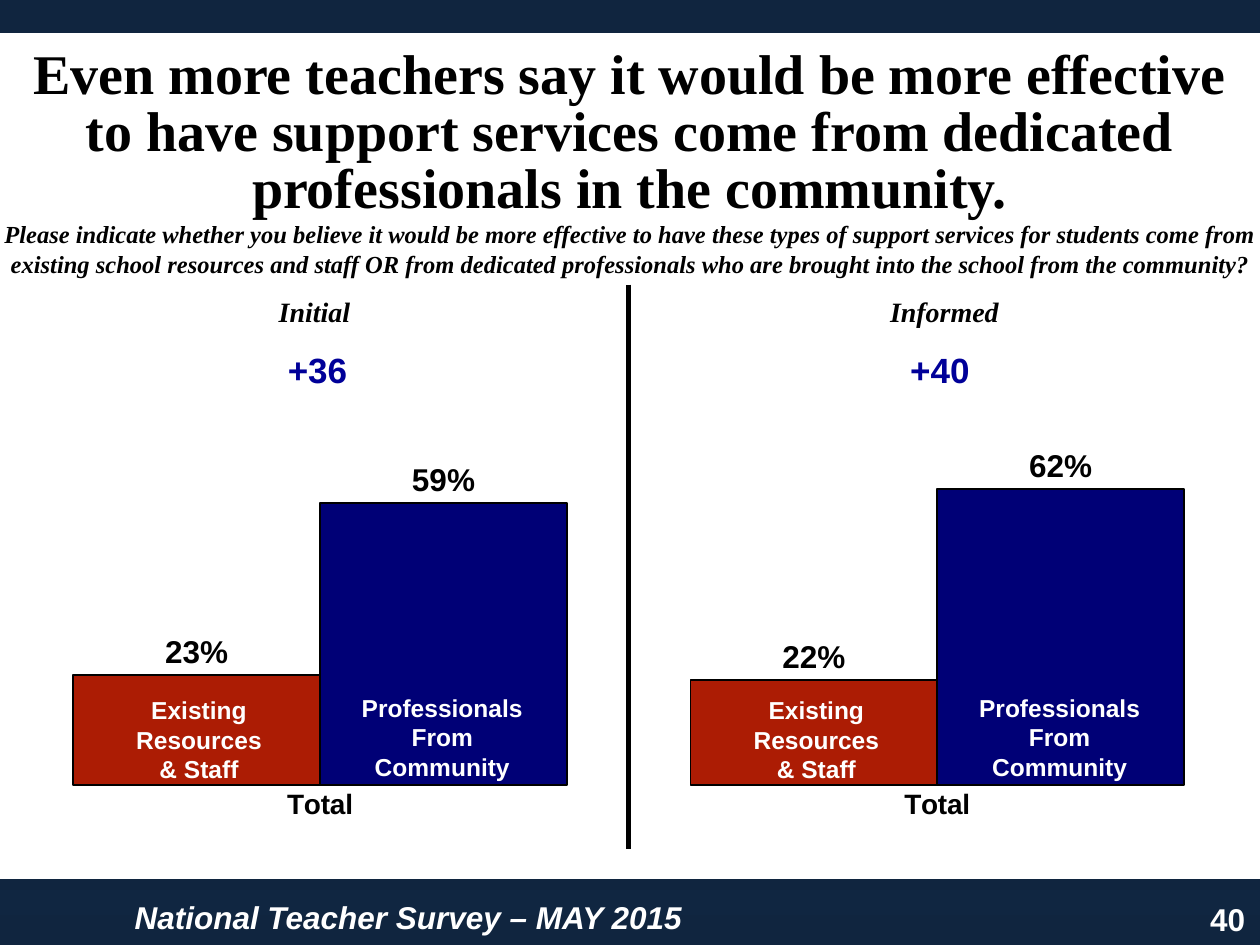
from copy import deepcopy

from lxml import etree
from pptx import Presentation
from pptx.chart.data import CategoryChartData
from pptx.dml.color import RGBColor
from pptx.enum.chart import XL_CHART_TYPE, XL_LABEL_POSITION, XL_TICK_LABEL_POSITION, XL_TICK_MARK
from pptx.enum.shapes import MSO_CONNECTOR, MSO_SHAPE
from pptx.enum.text import MSO_ANCHOR, PP_ALIGN
from pptx.oxml import parse_xml
from pptx.oxml.ns import nsdecls, qn
from pptx.util import Pt

NAVY = RGBColor(0x10, 0x25, 0x3F)
NAVY_LIGHT = RGBColor(0x17, 0x37, 0x5E)
WHITE = RGBColor(0xFF, 0xFF, 0xFF)
BLACK = RGBColor(0, 0, 0)
RED = RGBColor(0xAC, 0x1C, 0x04)
BLUE = RGBColor(0, 0, 0x76)
MARGIN_BLUE = RGBColor(0, 0, 0x99)

SANS = "Arial"
SERIF = "Times New Roman"

TITLE = ("Even more teachers say it would be more effective to have support services "
         "come from dedicated professionals in the community.")
QUESTION = ("Please indicate whether you believe it would be more effective to have these types of "
            "support services for students come from existing school resources and staff OR from "
            "dedicated professionals who are brought into the school from the community?")


def style_font(font, size, color, name=SANS, italic=False):
    font.name = name
    font.size = Pt(size)
    font.bold = True
    font.italic = italic
    font.color.rgb = color


def add_text(slide, box, lines, size, color, name=SANS, italic=False, align=PP_ALIGN.CENTER):
    frame = slide.shapes.add_textbox(*map(Pt, box)).text_frame
    frame.word_wrap = True
    frame.text = "\n".join(lines)
    for paragraph in frame.paragraphs:
        paragraph.alignment = align
        style_font(paragraph.font, size, color, name, italic)


def set_background(slide):
    fill = slide.background.fill
    fill.gradient()
    fill.gradient_angle = 90
    stops = slide.element.find(".//" + qn("a:gsLst"))
    stops.append(deepcopy(stops[-1]))
    for stop, position, color in zip(fill.gradient_stops, (0, 0.5, 1), (NAVY, NAVY_LIGHT, NAVY)):
        stop.position = position
        stop.color.rgb = color


def add_panel(slide):
    panel = slide.shapes.add_shape(MSO_SHAPE.RECTANGLE, Pt(-7.2), Pt(15.84), Pt(733.7), Pt(489.6))
    panel.shadow.inherit = False
    panel.fill.solid()
    panel.fill.fore_color.rgb = WHITE
    panel.line.color.rgb = NAVY
    panel.line.width = Pt(6)


def set_title(slide):
    title = slide.shapes.title
    title.left, title.top, title.width, title.height = Pt(0), Pt(23.76), Pt(720), Pt(105.84)
    title.text_frame.text = TITLE
    title.text_frame.vertical_anchor = MSO_ANCHOR.MIDDLE
    paragraph = title.text_frame.paragraphs[0]
    paragraph.alignment = PP_ALIGN.CENTER
    paragraph.line_spacing = 0.85
    style_font(paragraph.font, 32, BLACK, SERIF)


def fix_plot_area(chart, x, y, width, height):
    """Pin the inner plot area to fractions of the chart frame."""
    plot_area = chart.element.find(".//" + qn("c:plotArea"))
    for layout in plot_area.findall(qn("c:layout")):
        plot_area.remove(layout)
    layout = parse_xml(f"<c:layout {nsdecls('c')}><c:manualLayout/></c:layout>")
    settings = {"layoutTarget": "inner", "xMode": "edge", "yMode": "edge",
                "x": x, "y": y, "w": width, "h": height}
    for tag, value in settings.items():
        etree.SubElement(layout[0], qn(f"c:{tag}")).set("val", str(value))
    plot_area.insert(0, layout)


def add_support_chart(slide):
    data = CategoryChartData(number_format="0%")
    data.categories = ["Total", "Total"]
    data.add_series("Series 1", (0.23, 0.22))
    data.add_series("Series 2", (0.59, 0.62))
    chart = slide.shapes.add_chart(XL_CHART_TYPE.COLUMN_CLUSTERED, Pt(-4.32), Pt(-14.4),
                                   Pt(727.92), Pt(525.6), data).chart
    chart.has_legend = False
    chart.has_title = False
    style_font(chart.font, 18, BLACK)
    fix_plot_area(chart, 0.015, 0.336, 0.969, 0.545)

    for axis in (chart.category_axis, chart.value_axis):
        axis.major_tick_mark = XL_TICK_MARK.NONE
        axis.has_major_gridlines = False
        axis.format.line.fill.background()
    style_font(chart.category_axis.tick_labels.font, 16, BLACK)
    shares = chart.value_axis
    shares.minimum_scale, shares.maximum_scale, shares.major_unit = 0, 1.05, 0.1
    shares.tick_label_position = XL_TICK_LABEL_POSITION.NONE

    plot = chart.plots[0]
    plot.gap_width = 50
    plot.overlap = 0
    plot.vary_by_categories = False
    for series, color in zip(plot.series, (RED, BLUE)):
        series.format.fill.solid()
        series.format.fill.fore_color.rgb = color
        series.format.line.color.rgb = BLACK
        series.format.line.width = Pt(1)
        labels = series.data_labels
        labels.show_value = True
        labels.number_format = "0%"
        labels.number_format_is_linked = False
        labels.position = XL_LABEL_POSITION.OUTSIDE_END
        style_font(labels.font, 18, BLACK)


def add_divider(slide):
    divider = slide.shapes.add_connector(MSO_CONNECTOR.STRAIGHT, Pt(359.28), Pt(162.72),
                                         Pt(359.28), Pt(485.28))
    divider.line.color.rgb = BLACK
    divider.line.width = Pt(3)
    etree.SubElement(divider.element.spPr, qn("a:effectLst"))


def add_half(slide, heading, heading_left, lead, lead_left, bars_left):
    """Add the heading, the lead and the bar captions of one half."""
    add_text(slide, (heading_left, 164.88, 359.28, 26.64), [heading], 16, BLACK, SERIF, True)
    add_text(slide, (lead_left, 195.84, 96.48, 31.68), [lead], 20, MARGIN_BLUE)
    add_text(slide, (bars_left, 393.84, 112.32, 58.32),
             ["Existing", "Resources", "& Staff"], 14, WHITE)
    add_text(slide, (bars_left + 134.64, 392.4, 120.96, 58.32),
             ["Professionals From", "Community"], 14, WHITE)


def main():
    deck = Presentation()
    deck.slide_width, deck.slide_height = Pt(720), Pt(540)
    slide = deck.slides.add_slide(deck.slide_layouts[5])
    set_background(slide)
    add_panel(slide)
    add_text(slide, (646.56, 510.48, 72, 28.8), ["40"], 18, WHITE, align=PP_ALIGN.RIGHT)
    add_text(slide, (69.84, 509.76, 562.32, 28.8), ["National Teacher Survey – MAY 2015"],
             18, WHITE, italic=True, align=PP_ALIGN.LEFT)
    add_support_chart(slide)
    set_title(slide)
    # The title placeholder comes first in the tree; lift it above the panel.
    slide.shapes.element.append(slide.shapes.title.element)
    add_text(slide, (-7.92, 121.68, 736.56, 41.04), [QUESTION], 14, BLACK, SERIF, True)
    add_divider(slide)
    add_half(slide, "Initial", 0, "+36", 133.2, 57.6)
    add_half(slide, "Informed", 360, "+40", 488.88, 410.4)
    deck.save("out.pptx")


if __name__ == "__main__":
    main()
